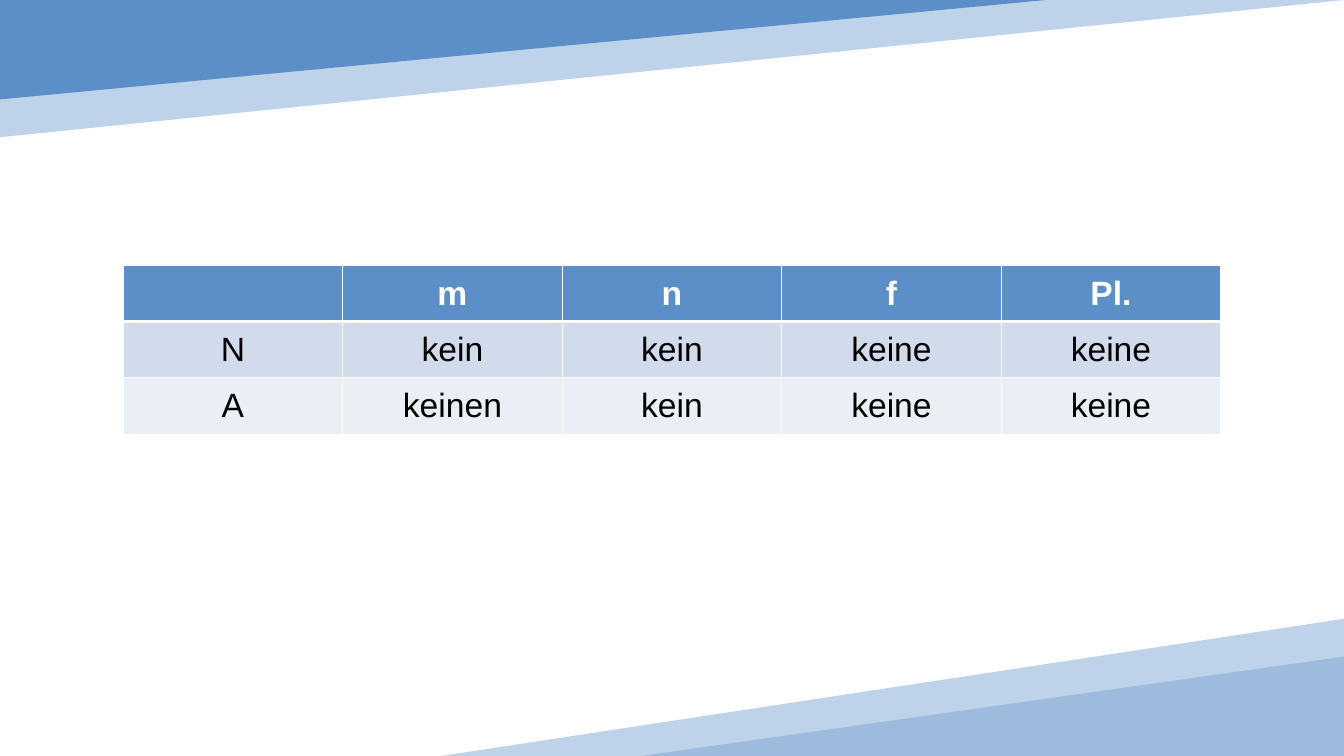
from dataclasses import dataclass

from lxml import etree
from pptx import Presentation
from pptx.dml.color import RGBColor
from pptx.enum.shapes import MSO_SHAPE
from pptx.enum.text import MSO_ANCHOR, PP_ALIGN
from pptx.oxml.ns import qn
from pptx.util import Pt

TRIANGLE = MSO_SHAPE.ISOSCELES_TRIANGLE
CENTER = PP_ALIGN.CENTER
MIDDLE = MSO_ANCHOR.MIDDLE

WIDTH, HEIGHT = 960, 540
BLUE, MID_BLUE, LIGHT_BLUE = "5C8FC7", "9DBCDD", "BED2E9"
WHITE, BLACK = "FFFFFF", "000000"

TABLE_LEFT, TABLE_TOP = 88, 189.5
COLUMN_WIDTH, ROW_HEIGHT = 156.8, 40.2


@dataclass
class Band:
    points: list[tuple[float, float]]
    color: str


@dataclass
class Wedge:
    left: float
    top: float
    width: float
    height: float
    rotation: float
    color: str


@dataclass
class Row:
    texts: list[str]
    fill: str
    color: str = BLACK
    bold: bool = False
    top_line: float = 1
    bottom_line: float = 1


BANDS = [
    Band([(WIDTH, 442), (WIDTH, 533), (646, HEIGHT), (315, HEIGHT)], LIGHT_BLUE),
    Band([(0, 98), (0, 7), (467, 0), (WIDTH, 0)], LIGHT_BLUE),
]
WEDGES = [
    Wedge(458, 469, 502, 71, 0, MID_BLUE),
    Wedge(0, 0, 747, 71, 180, BLUE),
]
ROWS = [
    Row(["", "m", "n", "f", "Pl."], BLUE, WHITE, bold=True, bottom_line=3),
    Row(["N", "kein", "kein", "keine", "keine"], "D2DBEB", top_line=3),
    Row(["A", "keinen", "kein", "keine", "keine"], "EAEEF5"),
]


def paint(fill, color: str) -> None:
    fill.solid()
    fill.fore_color.rgb = RGBColor.from_string(color)


def finish(sp, color: str) -> None:
    """Give a shape a plain fill without outline or shadow."""
    paint(sp.fill, color)
    sp.line.fill.background()
    sp.shadow.inherit = False


def add_band(shapes, band: Band) -> None:
    start, *rest = [(Pt(x), Pt(y)) for x, y in band.points]
    builder = shapes.build_freeform(*start)
    builder.add_line_segments(rest, close=True)
    finish(builder.convert_to_shape(), band.color)


def add_wedge(shapes, wedge: Wedge) -> None:
    sp = shapes.add_shape(TRIANGLE, Pt(wedge.left), Pt(wedge.top),
                          Pt(wedge.width), Pt(wedge.height))
    sp.adjustments[0] = 1
    sp.rotation = wedge.rotation
    finish(sp, wedge.color)


def add_borders(cell, top: float, bottom: float) -> None:
    tc_pr = cell._tc.get_or_add_tcPr()
    for side, width in (("L", 1), ("R", 1), ("T", top), ("B", bottom)):
        ln = etree.SubElement(tc_pr, qn(f"a:ln{side}"), w=str(Pt(width)))
        fill = etree.SubElement(ln, qn("a:solidFill"))
        etree.SubElement(fill, qn("a:srgbClr"), val=WHITE)


def fill_cell(cell, text: str, row: Row) -> None:
    add_borders(cell, row.top_line, row.bottom_line)
    paint(cell.fill, row.fill)
    cell.vertical_anchor = MIDDLE
    if not text:
        return
    p = cell.text_frame.paragraphs[0]
    p.alignment = CENTER
    r = p.add_run()
    r.text = text
    r.font.name = "Arial"
    r.font.size = Pt(24)
    r.font.bold = row.bold
    r.font.color.rgb = RGBColor.from_string(row.color)


def add_article_table(shapes, rows: list[Row]) -> None:
    columns = len(rows[0].texts)
    table = shapes.add_table(
        len(rows), columns, Pt(TABLE_LEFT), Pt(TABLE_TOP),
        Pt(columns * COLUMN_WIDTH), Pt(len(rows) * ROW_HEIGHT)).table
    for column in table.columns:
        column.width = Pt(COLUMN_WIDTH)
    for i, row in enumerate(rows):
        table.rows[i].height = Pt(ROW_HEIGHT)
        for j, text in enumerate(row.texts):
            fill_cell(table.cell(i, j), text, row)


def main() -> None:
    prs = Presentation()
    prs.slide_width, prs.slide_height = Pt(WIDTH), Pt(HEIGHT)
    s = prs.slides.add_slide(prs.slide_layouts[6])
    paint(s.background.fill, WHITE)
    for band, wedge in zip(BANDS, WEDGES):
        add_band(s.shapes, band)
        add_wedge(s.shapes, wedge)
    add_article_table(s.shapes, ROWS)
    prs.save("out.pptx")


if __name__ == "__main__":
    main()
